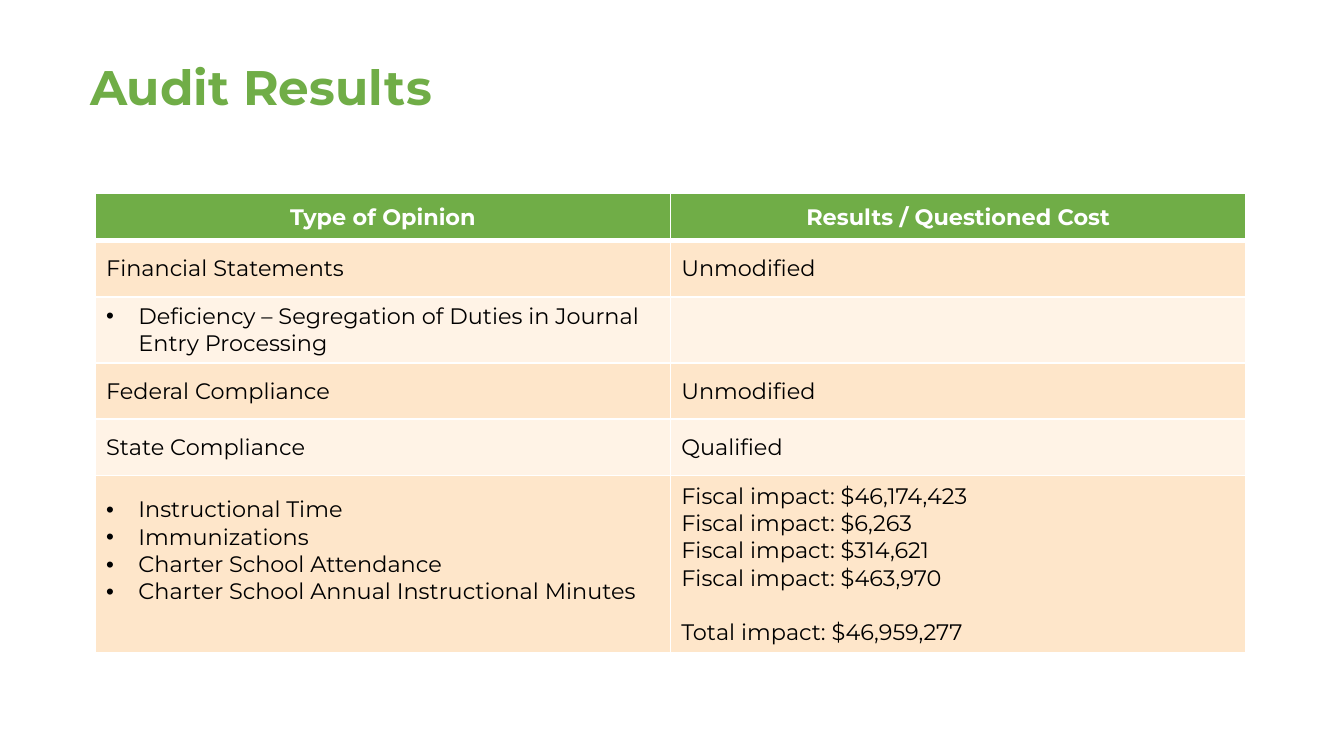
from dataclasses import dataclass

from lxml.etree import SubElement
from pptx import Presentation
from pptx.dml.color import RGBColor
from pptx.enum.text import MSO_ANCHOR, PP_ALIGN
from pptx.oxml.ns import qn
from pptx.util import Pt


@dataclass(frozen=True)
class Theme:
    """Colours, font and type sizes of the slide."""

    font: str = "Montserrat"
    green: str = "70AD47"
    white: str = "FFFFFF"
    black: str = "000000"
    bands: tuple = ("FEE6CA", "FFF3E6")
    title: int = 26
    body: int = 12
    line: float = 14.6
    thin: int = 1
    thick: int = 3


THEME = Theme()
HEADS = ("Type of Opinion", "Results / Questioned Cost")
ROWS = (
    (("Financial Statements",), ("Unmodified",), False),
    (("Deficiency – Segregation of Duties in Journal Entry Processing",), (), True),
    (("Federal Compliance",), ("Unmodified",), False),
    (("State Compliance",), ("Qualified",), False),
    (
        (
            "Instructional Time",
            "Immunizations",
            "Charter School Attendance",
            "Charter School Annual Instructional Minutes",
        ),
        (
            "Fiscal impact: $46,174,423",
            "Fiscal impact: $6,263",
            "Fiscal impact: $314,621",
            "Fiscal impact: $463,970",
            "Total impact: $46,959,277",
        ),
        True,
    ),
)
HEIGHTS = (70, 84, 98, 84, 84, 264)


def px(count):
    """Turn px into EMU, at 200 px to the inch."""
    return count * 4572


def style(para, size, color, bold=False):
    """Set the font of a whole paragraph."""
    font = para.font
    font.name, font.size, font.bold = THEME.font, Pt(size), bold
    font.color.rgb = RGBColor.from_string(color)


def bullet(para):
    """Give a paragraph a round bullet and a hanging indent."""
    props = para._p.get_or_add_pPr()
    props.set("marL", str(px(48)))
    props.set("indent", str(-px(48)))
    tint = SubElement(props, qn("a:buClr"))
    SubElement(tint, qn("a:srgbClr"), val=THEME.black)
    SubElement(props, qn("a:buFont"), typeface="Arial")
    SubElement(props, qn("a:buChar"), char="•")


def edge(cell, top, bottom):
    """Draw the white borders of a cell."""
    props = cell._tc.get_or_add_tcPr()
    widths = {"L": THEME.thin, "R": THEME.thin, "T": top, "B": bottom}
    for side, width in widths.items():
        line = SubElement(props, qn(f"a:ln{side}"), w=str(Pt(width)))
        fill = SubElement(line, qn("a:solidFill"))
        SubElement(fill, qn("a:srgbClr"), val=THEME.white)


def paint(cell, color, side, rim):
    """Set the fill, margins and anchor of a cell."""
    cell.fill.solid()
    cell.fill.fore_color.rgb = RGBColor.from_string(color)
    cell.margin_left = cell.margin_right = px(side)
    cell.margin_top = cell.margin_bottom = px(rim)
    cell.vertical_anchor = MSO_ANCHOR.MIDDLE


def add_title(slide, text):
    """Add the slide title."""
    frame = slide.shapes.add_textbox(px(134), px(94), px(1830), px(78)).text_frame
    frame.word_wrap = True
    frame.margin_left = frame.margin_right = 0
    frame.margin_top = frame.margin_bottom = 0
    para = frame.paragraphs[0]
    para.text = text
    para.line_spacing = 0.9
    style(para, THEME.title, THEME.green, True)


def fill_head(cell, text):
    """Write one header cell."""
    edge(cell, THEME.thin, THEME.thick)
    paint(cell, THEME.green, 12, 0)
    para = cell.text_frame.paragraphs[0]
    para.text = text
    para.alignment = PP_ALIGN.CENTER
    style(para, THEME.body, THEME.white, True)


def fill_body(cell, lines, band, dots, first):
    """Write one body cell, a paragraph to each line."""
    edge(cell, THEME.thick if first else THEME.thin, THEME.thin)
    paint(cell, band, 16, 8)
    cell.text = "\n".join(lines)
    for para in cell.text_frame.paragraphs:
        if dots:
            bullet(para)
        style(para, THEME.body, THEME.black)
        if para.text.startswith("Total"):
            para.space_before = Pt(THEME.line)


def add_grid(slide):
    """Add the table of opinions and results."""
    frame = slide.shapes.add_table(
        len(HEIGHTS), len(HEADS), px(142), px(288), px(1712), px(sum(HEIGHTS))
    )
    table = frame.table
    table.horz_banding = False
    for row, height in zip(table.rows, HEIGHTS):
        row.height = px(height)
    for col, text in enumerate(HEADS):
        fill_head(table.cell(0, col), text)
    for row, (left, right, dots) in enumerate(ROWS, 1):
        band = THEME.bands[(row - 1) % 2]
        fill_body(table.cell(row, 0), left, band, dots, row == 1)
        fill_body(table.cell(row, 1), right, band, False, row == 1)
    table.cell(len(ROWS), 0).margin_bottom = px(48)


def main():
    """Build the slide and save it."""
    deck = Presentation()
    deck.slide_width, deck.slide_height = px(2000), px(1125)
    slide = deck.slides.add_slide(deck.slide_layouts[6])
    add_title(slide, "Audit Results")
    add_grid(slide)
    deck.save("out.pptx")


if __name__ == "__main__":
    main()
